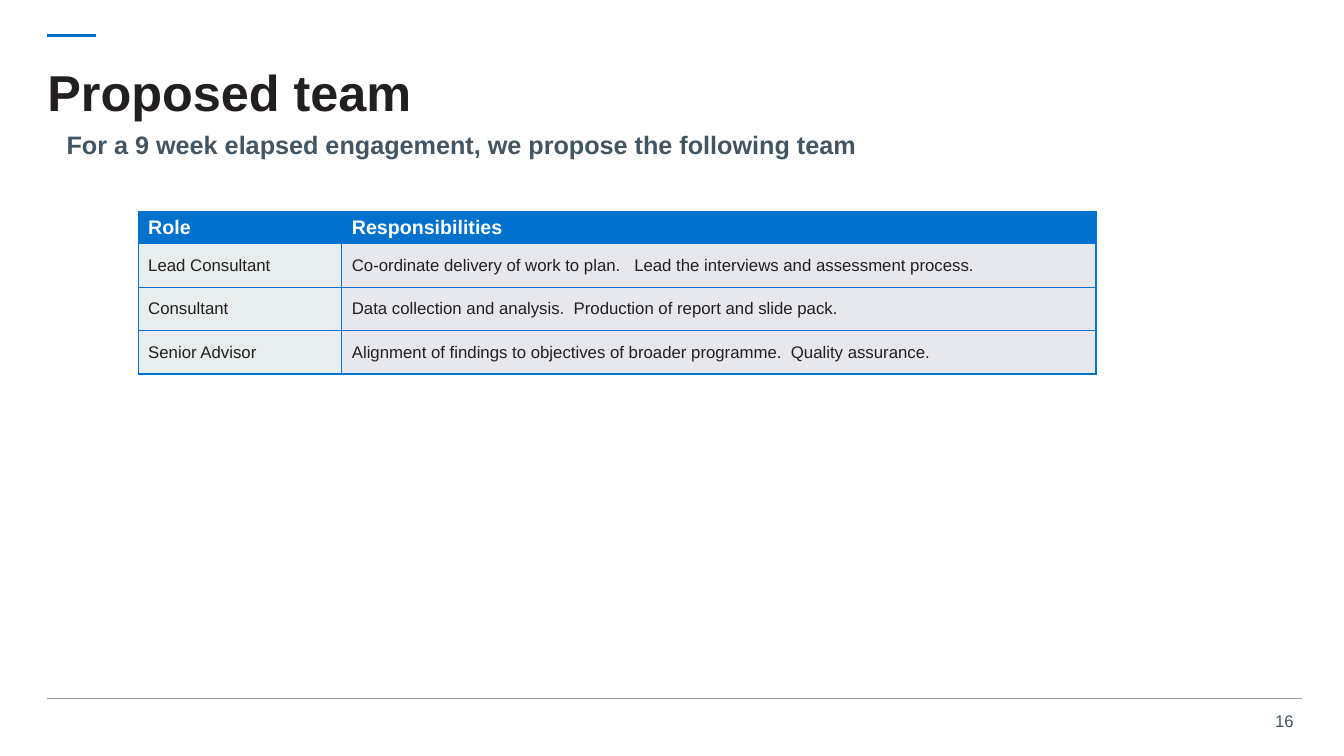
from lxml import etree
from pptx import Presentation
from pptx.dml.color import RGBColor
from pptx.enum.shapes import MSO_CONNECTOR
from pptx.enum.text import MSO_ANCHOR, MSO_AUTO_SIZE, PP_ALIGN
from pptx.oxml.ns import qn
from pptx.util import Pt

PX = 9144
STRAIGHT = MSO_CONNECTOR.STRAIGHT
TOP, MIDDLE = MSO_ANCHOR.TOP, MSO_ANCHOR.MIDDLE
LEFT, RIGHT = PP_ALIGN.LEFT, PP_ALIGN.RIGHT
NO_AUTOFIT = MSO_AUTO_SIZE.NONE

TITLE_ONLY = 5
FONT = "Arial"
BLUE, SLATE, INK, WHITE = "0072CE", "425563", "231F20", "FFFFFF"
RULE_GREY = "919EA8"
BODY_FILLS = ("E8EDEE", "E7E8ED")
COLUMN_WIDTHS = (202, 748)
HEADER_HEIGHT, BODY_HEIGHT = 32, 43

TEAM = (
    ("Role", "Responsibilities"),
    ("Lead Consultant",
     "Co-ordinate delivery of work to plan.   Lead the interviews and assessment process."),
    ("Consultant",
     "Data collection and analysis.  Production of report and slide pack."),
    ("Senior Advisor",
     "Alignment of findings to objectives of broader programme.  Quality assurance."),
)


def px(*lengths):
    """Turn pixel lengths into a list of EMU."""
    return [length * PX for length in lengths]


def color(hex_value):
    """Turn a hex string into a colour."""
    return RGBColor.from_string(hex_value)


def write(frame, text, size, hex_value, bold=False, align=LEFT):
    """Put one formatted paragraph in a text frame and return it."""
    frame.text = text
    paragraph = frame.paragraphs[0]
    paragraph.alignment = align
    font = paragraph.runs[0].font
    font.name, font.size, font.bold = FONT, Pt(size), bold
    font.color.rgb = color(hex_value)
    return paragraph


def set_frame(frame, anchor, side=0, edge=0):
    """Wrap a text frame and set its anchor and insets."""
    frame.word_wrap = True
    frame.auto_size = NO_AUTOFIT
    frame.vertical_anchor = anchor
    frame.margin_left, frame.margin_right = px(side, side)
    frame.margin_top, frame.margin_bottom = px(edge, edge)


def add_rule(slide, left, right, y, hex_value, width):
    """Draw a horizontal rule."""
    rule = slide.shapes.add_connector(STRAIGHT, *px(left, y, right, y))
    rule.line.color.rgb = color(hex_value)
    rule.line.width = Pt(width)
    etree.SubElement(rule._element.spPr, qn("a:effectLst"))


def add_title(slide, text):
    """Place and fill the title placeholder."""
    title = slide.shapes.title
    title.left, title.top, title.width, title.height = px(47, 47, 1247, 95)
    set_frame(title.text_frame, MIDDLE)
    write(title.text_frame, text, 36, INK, bold=True).line_spacing = 0.9


def add_subtitle(slide, text):
    """Add the indented line below the title."""
    subtitle = slide.shapes.add_textbox(*px(47, 131, 1209, 51))
    set_frame(subtitle.text_frame, TOP)
    paragraph = write(subtitle.text_frame, text, 18, SLATE, bold=True)
    paragraph.line_spacing = 0.92
    paragraph._p.get_or_add_pPr().set("marL", str(19 * PX))


def add_page_number(slide, text):
    """Add the page number at the bottom right."""
    number = slide.shapes.add_textbox(*px(1252, 700, 41, 30))
    set_frame(number.text_frame, TOP, side=10, edge=5)
    write(number.text_frame, text, 12, SLATE, align=RIGHT)


def add_borders(cell, hex_value, width):
    """Draw all four borders of a table cell."""
    properties = cell._tc.get_or_add_tcPr()
    for side in ("a:lnL", "a:lnR", "a:lnT", "a:lnB"):
        border = etree.SubElement(properties, qn(side), w=str(Pt(width)))
        fill = etree.SubElement(border, qn("a:solidFill"))
        etree.SubElement(fill, qn("a:srgbClr"), val=hex_value)


def fill_cell(cell, text, fill, is_header):
    """Write and format one table cell."""
    add_borders(cell, BLUE, 1)
    cell.fill.solid()
    cell.fill.fore_color.rgb = color(fill)
    cell.vertical_anchor = TOP if is_header else MIDDLE
    size, ink = (14, WHITE) if is_header else (12, INK)
    write(cell.text_frame, text, size, ink, bold=is_header)


def add_team_table(slide):
    """Add the table of roles and responsibilities."""
    height = HEADER_HEIGHT + BODY_HEIGHT * (len(TEAM) - 1)
    table = slide.shapes.add_table(
        len(TEAM), len(COLUMN_WIDTHS),
        *px(137, 210, sum(COLUMN_WIDTHS), height)).table
    for column, width in zip(table.columns, COLUMN_WIDTHS):
        column.width = width * PX
    for row_index, texts in enumerate(TEAM):
        is_header = row_index == 0
        row = table.rows[row_index]
        row.height = (HEADER_HEIGHT if is_header else BODY_HEIGHT) * PX
        for cell, text, body_fill in zip(row.cells, texts, BODY_FILLS):
            fill_cell(cell, text, BLUE if is_header else body_fill, is_header)


def main():
    """Build the slide and save it."""
    deck = Presentation()
    deck.slide_width, deck.slide_height = px(1333, 750)
    slide = deck.slides.add_slide(deck.slide_layouts[TITLE_ONLY])
    add_page_number(slide, "16")
    add_rule(slide, 47, 95, 35, BLUE, 2)
    add_rule(slide, 47, 1291, 693, RULE_GREY, 0.75)
    add_title(slide, "Proposed team")
    add_team_table(slide)
    add_subtitle(
        slide, "For a 9 week elapsed engagement, we propose the following team")
    deck.save("out.pptx")


if __name__ == "__main__":
    main()
